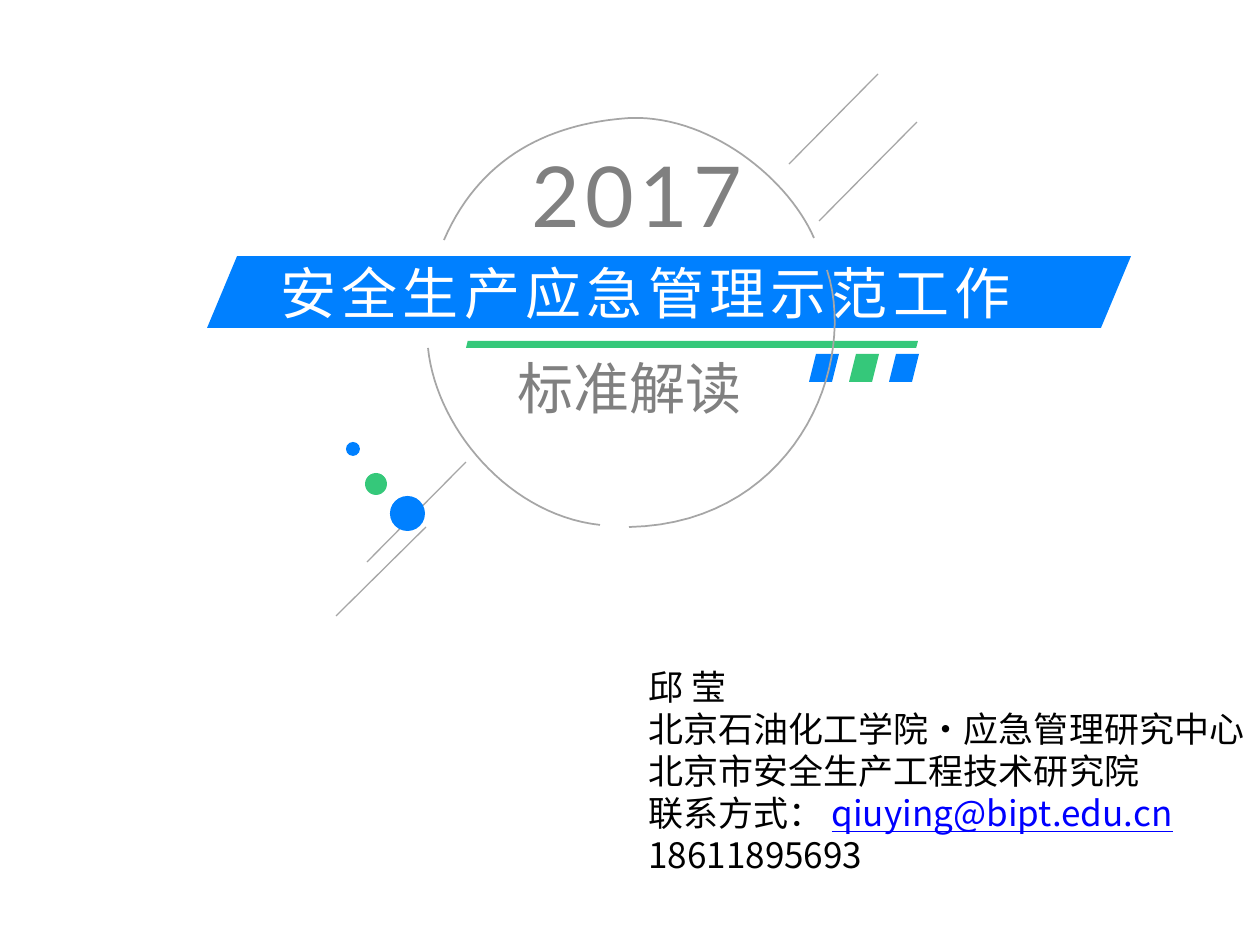
from lxml import etree
from pptx import Presentation
from pptx import util as u
from pptx.dml.color import RGBColor
from pptx.enum import shapes, text
from pptx.oxml.ns import qn

PX = 914400 / 126
COLORS = {"blue": "0080FF", "green": "35C87A", "grey": "808080", "rule": "A6A6A6",
          "white": "FFFFFF", "black": "000000", "link": "0000FF"}
CJK = "Noto Sans CJK SC"

RAYS = [(789, 164, 878, 74), (819, 221, 917, 122),
        (336, 616, 426, 527), (367, 562, 466, 462)]
BANNER = (207, 256, 924, 72)
UNDERLINE = (466, 341, 452, 7)
TILE_LEFT, TILE_TOP, TILE_W, TILE_H, TILE_STEP = 809, 354, 30, 28, 40
TILE_COLORS = ["blue", "green", "blue"]
DOTS = [(390, 496, 35, "blue"), (346, 442, 14, "blue"), (365, 473, 22, "green")]
# Start point, then cubic segments of two control points and an end point
ARCS = [
    [(444, 240), (481, 155), (552, 123), (630, 118), (709, 115), (788, 178), (814, 238)],
    [(827, 270), (859, 370), (791, 524), (629, 527)],
    [(600, 525), (508, 515), (436, 427), (428, 348)],
]
YEAR = [[("2017", "grey")]]
TITLE = [[("安全生产应急管理示范工作", "white")]]
SUBTITLE = [[("标准解读", "grey")]]
CONTACT = [
    [("邱 莹", "black")],
    [("北京石油化工学院•应急管理研究中心", "black")],
    [("北京市安全生产工程技术研究院", "black")],
    [("联系方式： ", "black"), ("qiuying@bipt.edu.cn", "link")],
    [("18611895693", "black")],
]


def emu(*lengths):
    return [u.Emu(round(length * PX)) for length in lengths]


def color(name):
    return RGBColor.from_string(COLORS[name])


def add_filled(slide, kind, box, fill, adjust=None):
    shape = slide.shapes.add_shape(kind, *emu(*box))
    shape.shadow.inherit = False
    shape.fill.solid()
    shape.fill.fore_color.rgb = color(fill)
    shape.line.fill.background()
    if adjust is not None:
        shape.adjustments[0] = adjust


def add_ray(slide, ends):
    ray = slide.shapes.add_connector(shapes.MSO_CONNECTOR.STRAIGHT, *emu(*ends))
    ray.line.color.rgb = color("rule")
    ray.line.width = u.Pt(0.75)
    etree.SubElement(ray._element.spPr, qn("a:effectLst"))


def curve_points(arc, steps=30):
    """Points along a chain of cubic Bezier segments."""
    points = [arc[0]]
    for first in range(0, len(arc) - 1, 3):
        controls = arc[first:first + 4]
        for step in range(1, steps + 1):
            t = step / steps
            weights = ((1 - t) ** 3, 3 * t * (1 - t) ** 2, 3 * t * t * (1 - t), t ** 3)
            points.append(tuple(sum(w * p[axis] for w, p in zip(weights, controls))
                                for axis in (0, 1)))
    return points


def add_arc(slide, arc):
    points = [emu(*point) for point in curve_points(arc)]
    builder = slide.shapes.build_freeform(*points[0])
    builder.add_line_segments(points[1:], close=False)
    outline = builder.convert_to_shape()
    outline.shadow.inherit = False
    outline.fill.background()
    outline.line.color.rgb = color("rule")
    outline.line.width = u.Pt(1)


def add_text(slide, box, paragraphs, size, font, east_asian=CJK, spacing=0,
             align=text.PP_ALIGN.LEFT, wrap=False):
    frame = slide.shapes.add_textbox(*emu(*box)).text_frame
    frame.word_wrap = wrap
    frame.auto_size = text.MSO_AUTO_SIZE.SHAPE_TO_FIT_TEXT
    for index, parts in enumerate(paragraphs):
        paragraph = frame.add_paragraph() if index else frame.paragraphs[0]
        paragraph.alignment = align
        for words, tint in parts:
            run = paragraph.add_run()
            run.text = words
            run.font.size = u.Pt(size)
            run.font.name = font
            run.font.color.rgb = color(tint)
            if tint == "link":
                run.font.underline = True
            properties = run._r.get_or_add_rPr()
            etree.SubElement(properties, qn("a:ea"), typeface=east_asian)
            if spacing:
                properties.set("spc", str(spacing * 100))


def main():
    deck = Presentation()
    deck.slide_width, deck.slide_height = emu(1260, 945)
    slide = deck.slides.add_slide(deck.slide_layouts[6])
    slanted, oval = shapes.MSO_SHAPE.PARALLELOGRAM, shapes.MSO_SHAPE.OVAL

    for ends in RAYS:
        add_ray(slide, ends)
    add_text(slide, (504, 347, 252, 81), SUBTITLE, 32, "Lato",
             align=text.PP_ALIGN.CENTER)
    add_text(slide, (519, 137, 236, 115), YEAR, 48, "Lato", spacing=3)
    add_filled(slide, slanted, BANNER, "blue", 0.418)
    add_text(slide, (268, 252, 767, 81), TITLE, 32, CJK, spacing=3)
    add_filled(slide, slanted, UNDERLINE, "green")
    for index, fill in enumerate(TILE_COLORS):
        left = TILE_LEFT + index * TILE_STEP
        add_filled(slide, slanted, (left, TILE_TOP, TILE_W, TILE_H), fill)
    for left, top, diameter, fill in DOTS:
        add_filled(slide, oval, (left, top, diameter, diameter), fill)
    for arc in ARCS:
        add_arc(slide, arc)
    add_text(slide, (636, 659, 627, 224), CONTACT, 20, "Noto Sans CJK JP",
             east_asian="Noto Sans CJK JP", wrap=True)
    deck.save("out.pptx")


if __name__ == "__main__":
    main()
